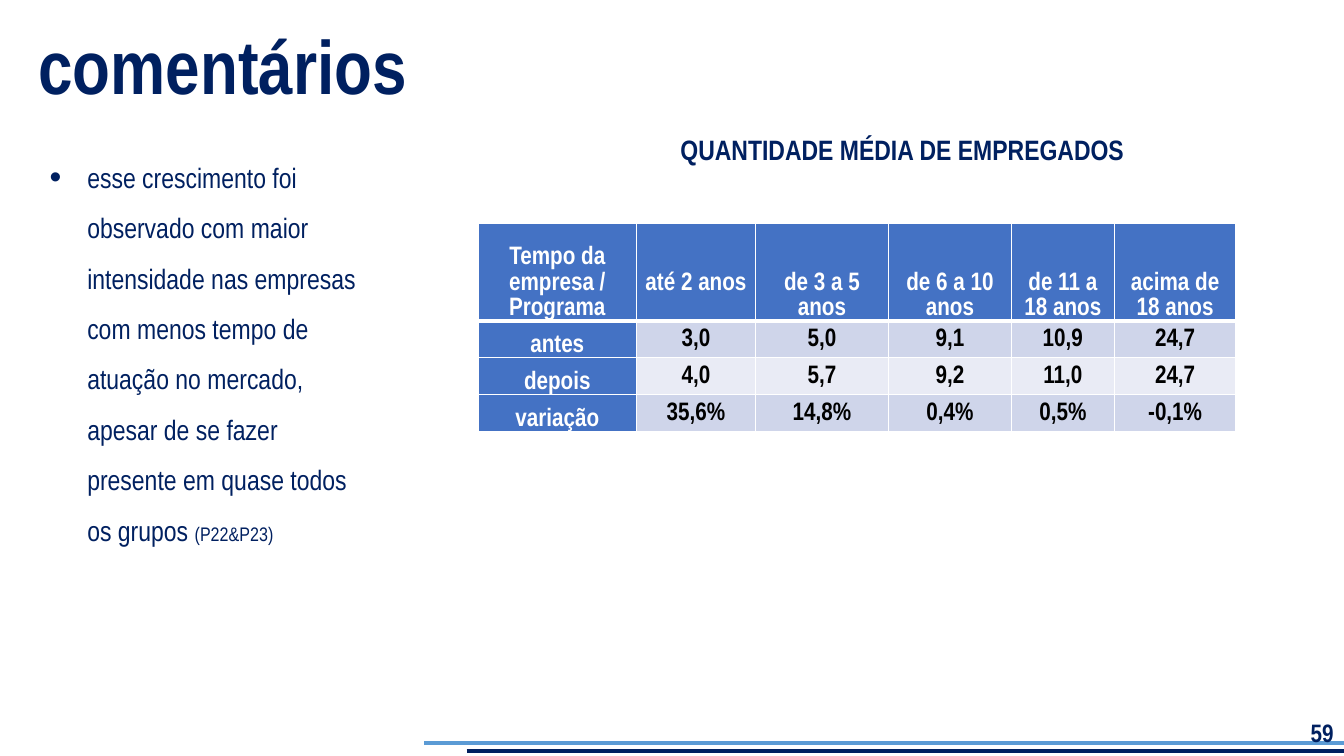
"""Build the slide on the average number of employees."""
from typing import NamedTuple

from lxml import etree
from pptx import Presentation
from pptx.dml.color import RGBColor
from pptx.enum.shapes import MSO_CONNECTOR
from pptx.enum.text import MSO_ANCHOR, PP_ALIGN
from pptx.oxml.ns import qn
from pptx.util import Cm, Pt

LEFT, MID, RIGHT = PP_ALIGN.LEFT, PP_ALIGN.CENTER, PP_ALIGN.RIGHT
TOP, CENTRE, LOW = MSO_ANCHOR.TOP, MSO_ANCHOR.MIDDLE, MSO_ANCHOR.BOTTOM
STRAIGHT = MSO_CONNECTOR.STRAIGHT

FONT = "Arial Narrow"
COLORS = {
    "navy": "002060", "sky": "5B9BD5", "head": "4472C4", "odd": "CFD5EA",
    "even": "E9EBF5", "white": "FFFFFF", "black": "000000",
}


class Run(NamedTuple):
    text: str
    size: int
    bold: bool = True
    color: str = "navy"


class Box(NamedTuple):
    left: float
    top: float
    width: float
    height: float
    runs: tuple[Run, ...]
    align: PP_ALIGN = LEFT
    anchor: MSO_ANCHOR = TOP
    bullet: bool = False


class Rule(NamedTuple):
    left: float
    y: float
    color: str


RULES = (Rule(10.69, 18.72, "sky"), Rule(11.76, 18.92, "navy"))
BOXES = (
    Box(26.24, 17.94, 7.62, 1.02, (Run("59", 18),), RIGHT, CENTRE),
    Box(1.0, 3.49, 8.33, 10.52, (
        Run("esse crescimento foi observado com maior intensidade nas empresas "
            "com menos tempo de atuação no mercado, apesar de se fazer presente "
            "em quase todos os grupos ", 20, False),
        Run("(P22&P23)", 14, False),
    ), bullet=True),
    Box(0.72, 0.36, 32.41, 2.57, (Run("comentários", 54),)),
    Box(13.94, 3.21, 17.6, 1.4, (Run("QUANTIDADE MÉDIA DE EMPREGADOS", 20),), MID),
)
GRID = (
    ("Tempo da empresa /\nPrograma", "até 2 anos", "de 3 a 5 anos",
     "de 6 a 10 anos", "de 11 a 18 anos", "acima de 18 anos"),
    ("antes", "3,0", "5,0", "9,1", "10,9", "24,7"),
    ("depois", "4,0", "5,7", "9,2", "11,0", "24,7"),
    ("variação", "35,6%", "14,8%", "0,4%", "0,5%", "-0,1%"),
)
WIDTHS = (3.99, 3.0, 3.35, 3.1, 2.59, 3.07)
HEIGHTS = (2.44, 0.92, 0.94, 0.94)


def rgb(name: str) -> RGBColor:
    return RGBColor.from_string(COLORS[name])


def add_run(para, item: Run) -> None:
    run = para.add_run()
    run.text = item.text
    font = run.font
    font.name, font.size, font.bold = FONT, Pt(item.size), item.bold
    font.color.rgb = rgb(item.color)


def add_dot(para) -> None:
    props = para._p.get_or_add_pPr()
    props.set("marL", str(Cm(0.95)))
    props.set("indent", str(Cm(-0.95)))
    tint = etree.SubElement(props, qn("a:buClr"))
    etree.SubElement(tint, qn("a:srgbClr"), val=COLORS["navy"])
    etree.SubElement(props, qn("a:buSzPct"), val="120000")
    etree.SubElement(props, qn("a:buFont"), typeface="Arial")
    etree.SubElement(props, qn("a:buChar"), char="•")


def draw_box(slide, box: Box) -> None:
    frame = slide.shapes.add_textbox(*map(Cm, box[:4])).text_frame
    frame.word_wrap = True
    frame.vertical_anchor = box.anchor
    para = frame.paragraphs[0]
    para.alignment = box.align
    if box.bullet:
        para.line_spacing = 1.5
        add_dot(para)
    for item in box.runs:
        add_run(para, item)


def draw_rule(slide, rule: Rule) -> None:
    line = slide.shapes.add_connector(
        STRAIGHT, Cm(rule.left), Cm(rule.y), Cm(33.87), Cm(rule.y))
    line.line.color.rgb = rgb(rule.color)
    line.line.width = Pt(3)
    etree.SubElement(line._element.spPr, qn("a:effectLst"))


def set_edge(cell, side: str, width: int) -> None:
    edge = etree.Element(qn(f"a:ln{side}"), w=str(Pt(width)))
    fill = etree.SubElement(edge, qn("a:solidFill"))
    etree.SubElement(fill, qn("a:srgbClr"), val=COLORS["white"])
    cell._tc.get_or_add_tcPr().append(edge)


def fill_cell(cell, row: int, col: int) -> None:
    head = row == 0 or col == 0
    for side in "LRTB":
        thick = (row == 0 and side == "B") or (row == 1 and side == "T")
        set_edge(cell, side, 3 if thick else 1)
    cell.fill.solid()
    cell.fill.fore_color.rgb = rgb("head" if head else "odd" if row % 2 else "even")
    cell.vertical_anchor = LOW if head else CENTRE
    cell.margin_left = cell.margin_right = Cm(0.13)
    cell.margin_top = 0
    cell.margin_bottom = Cm(0.64 if (row, col) == (0, 1) else 0)
    frame = cell.text_frame
    for num, text in enumerate(GRID[row][col].split("\n")):
        para = frame.add_paragraph() if num else frame.paragraphs[0]
        para.alignment = MID
        para.line_spacing = 1.07
        add_run(para, Run(text, 18, True, "white" if head else "black"))


def draw_table(slide) -> None:
    table = slide.shapes.add_table(
        len(GRID), len(WIDTHS), Cm(12.05), Cm(5.64),
        Cm(sum(WIDTHS)), Cm(sum(HEIGHTS))).table
    for col, width in enumerate(WIDTHS):
        table.columns[col].width = Cm(width)
    for row, height in enumerate(HEIGHTS):
        table.rows[row].height = Cm(height)
        for col in range(len(WIDTHS)):
            fill_cell(table.cell(row, col), row, col)


def main() -> None:
    deck = Presentation()
    deck.slide_width, deck.slide_height = Cm(33.87), Cm(19.05)
    slide = deck.slides.add_slide(deck.slide_layouts[6])
    for rule in RULES:
        draw_rule(slide, rule)
    for box in BOXES:
        draw_box(slide, box)
    draw_table(slide)
    deck.save("out.pptx")


if __name__ == "__main__":
    main()
